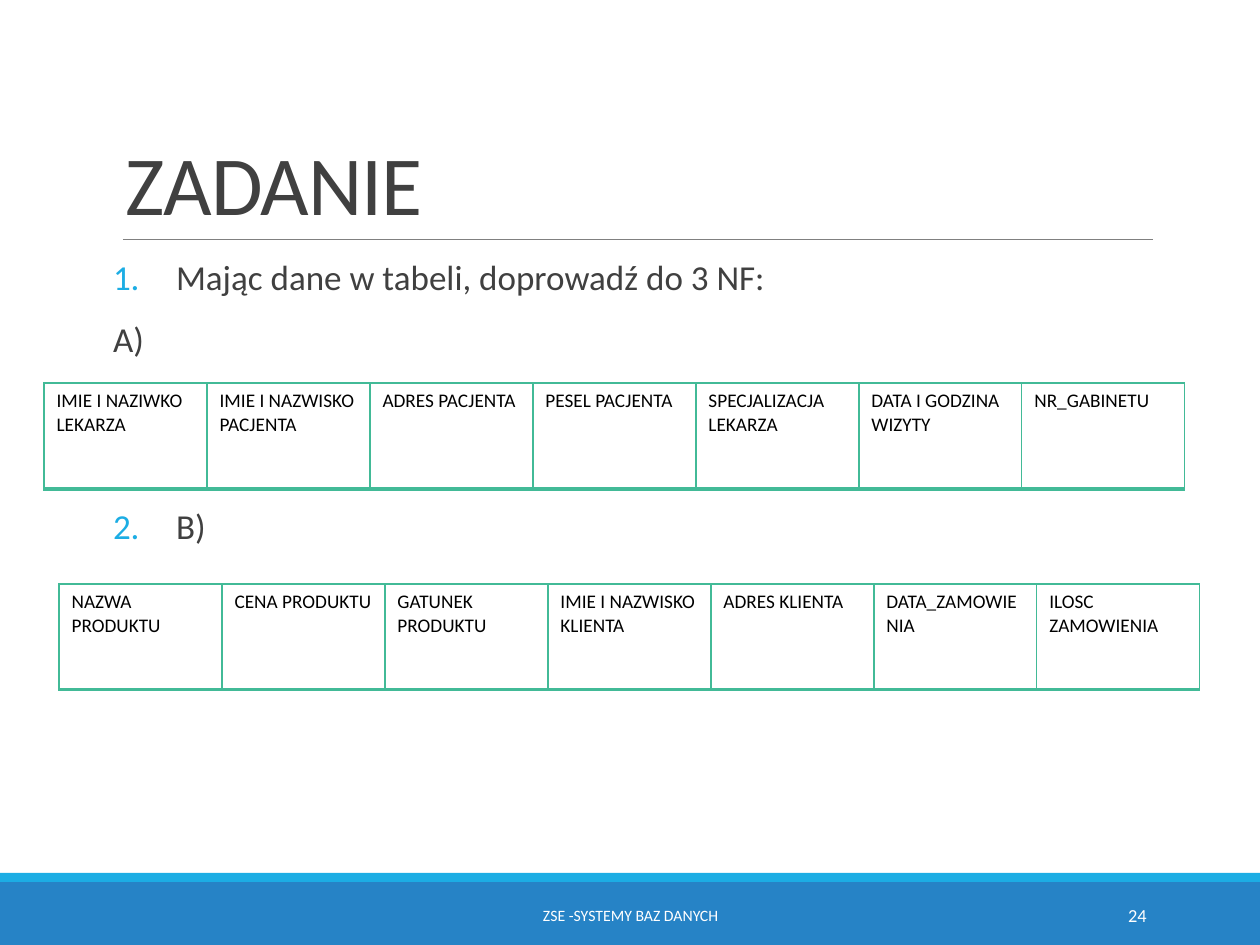
from lxml.etree import SubElement
from pptx import Presentation
from pptx.dml.color import RGBColor
from pptx.enum.shapes import MSO_CONNECTOR, MSO_SHAPE
from pptx.enum.text import MSO_ANCHOR, PP_ALIGN
from pptx.oxml import parse_xml
from pptx.oxml.ns import nsdecls, qn
from pptx.util import Emu, Pt

PX = 914400 // 126
WIDTH, HEIGHT = 1260, 945
FONT = "Calibri"
COLORS = {
    "text": "404040", "rule": "808080", "accent": "1CADE4",
    "footer": "2683C6", "border": "42BA97", "black": "000000", "white": "FFFFFF",
}
DOCTOR_FIELDS = [
    "IMIE I NAZIWKO LEKARZA", "IMIE I NAZWISKO PACJENTA", "ADRES PACJENTA",
    "PESEL PACJENTA", "SPECJALIZACJA LEKARZA", "DATA I GODZINA WIZYTY", "NR_GABINETU",
]
ORDER_FIELDS = [
    "NAZWA PRODUKTU", "CENA PRODUKTU", "GATUNEK PRODUKTU", "IMIE I NAZWISKO KLIENTA",
    "ADRES KLIENTA", "DATA_ZAMOWIENIA", "ILOSC ZAMOWIENIA",
]


def px(*lengths):
    return [Emu(length * PX) for length in lengths]


def color(name):
    return RGBColor.from_string(COLORS[name])


def write(para, text, size, ink="text", align=None, line=None, before=None,
          after=None, tracking=None, number=None):
    """Fill a paragraph; number makes it a numbered item with a hanging indent."""
    para.alignment = align
    para.line_spacing = line
    if before is not None:
        para.space_before = Pt(before)
    if after is not None:
        para.space_after = Pt(after)
    span = para.add_run()
    span.text = text
    span.font.size = Pt(size)
    span.font.name = FONT
    span.font.color.rgb = color(ink)
    if tracking is not None:
        span.font._element.set("spc", str(tracking))
    if number is not None:
        props = para._p.get_or_add_pPr()
        indent = 63 * PX
        props.set("marL", str(indent))
        props.set("indent", str(-indent))
        bullet_color = SubElement(props, qn("a:buClr"))
        SubElement(bullet_color, qn("a:srgbClr"), val=COLORS["accent"])
        SubElement(props, qn("a:buFont"), typeface="+mj-lt")
        SubElement(props, qn("a:buAutoNum"), type="arabicPeriod", startAt=str(number))


def add_text_frame(page, box, anchor=MSO_ANCHOR.TOP):
    frame = page.shapes.add_textbox(*px(*box)).text_frame
    frame.word_wrap = True
    frame.vertical_anchor = anchor
    return frame


def add_band(page, box, fill):
    band = page.shapes.add_shape(MSO_SHAPE.RECTANGLE, *px(*box))
    band.shadow.inherit = False
    band.fill.solid()
    band.fill.fore_color.rgb = color(fill)
    band.line.fill.background()


def add_heading(page, box):
    left, top, width, height = box
    # Rule under the title
    bottom = top + height
    rule = page.shapes.add_connector(
        MSO_CONNECTOR.STRAIGHT, *px(left + 10, bottom, left + width, bottom))
    rule.line.color.rgb = color("rule")
    rule.line.width = Pt(0.5)
    SubElement(rule._element.spPr, qn("a:effectLst"))
    # Title
    frame = add_text_frame(page, box, MSO_ANCHOR.BOTTOM)
    write(frame.paragraphs[0], "ZADANIE", 48, line=0.85, tracking=-50)


def add_tasks(page, box):
    frame = add_text_frame(page, box)
    frame.margin_left = frame.margin_right = 0
    # The last item leaves room for the first table above it
    items = [("Mając dane w tabeli, doprowadź do 3 NF:", 1, 12),
             ("A)", None, 12), ("B)", 2, 83)]
    for index, (text, number, before) in enumerate(items):
        para = frame.add_paragraph() if index else frame.paragraphs[0]
        write(para, text, 20, line=0.9, before=before, after=2, number=number)


def add_borders(cell):
    props = cell._tc.get_or_add_tcPr()
    for index, (side, width) in enumerate([("L", 1), ("R", 1), ("T", 1), ("B", 2)]):
        props.insert(index, parse_xml(
            f'<a:ln{side} {nsdecls("a")} w="{Pt(width)}"><a:solidFill>'
            f'<a:srgbClr val="{COLORS["border"]}"/></a:solidFill></a:ln{side}>'))


def add_field_table(page, box, fields):
    table = page.shapes.add_table(1, len(fields), *px(*box)).table
    table.first_row = table.horz_banding = False
    for cell, field in zip(table.rows[0].cells, fields):
        cell.fill.background()
        add_borders(cell)
        write(cell.text_frame.paragraphs[0], field, 11, ink="black")


def add_footer(page, box):
    left, top, width, height = box
    # Bands
    stripe = 9
    add_band(page, (left, top + stripe, width, height - stripe), "footer")
    add_band(page, (left, top, width, stripe), "accent")
    # Course name and page number
    labels = [("ZSE -SYSTEMY BAZ DANYCH", 9, 381, 499, PP_ALIGN.CENTER),
              ("24", 10.5, 1023, 136, PP_ALIGN.RIGHT)]
    for text, size, offset, label_width, align in labels:
        frame = add_text_frame(
            page, (left + offset, top + 17, label_width, 50), MSO_ANCHOR.MIDDLE)
        write(frame.paragraphs[0], text, size, ink="white", align=align)


def main():
    deck = Presentation()
    deck.slide_width, deck.slide_height = px(WIDTH, HEIGHT)
    page = deck.slides.add_slide(deck.slide_layouts[6])
    add_footer(page, (0, 873, WIDTH, 72))
    add_heading(page, (113, 39, 1040, 200))
    add_tasks(page, (113, 254, 1040, 555))
    add_field_table(page, (44, 383, 1141, 106), DOCTOR_FIELDS)
    add_field_table(page, (59, 584, 1141, 106), ORDER_FIELDS)
    deck.save("out.pptx")


if __name__ == "__main__":
    main()
